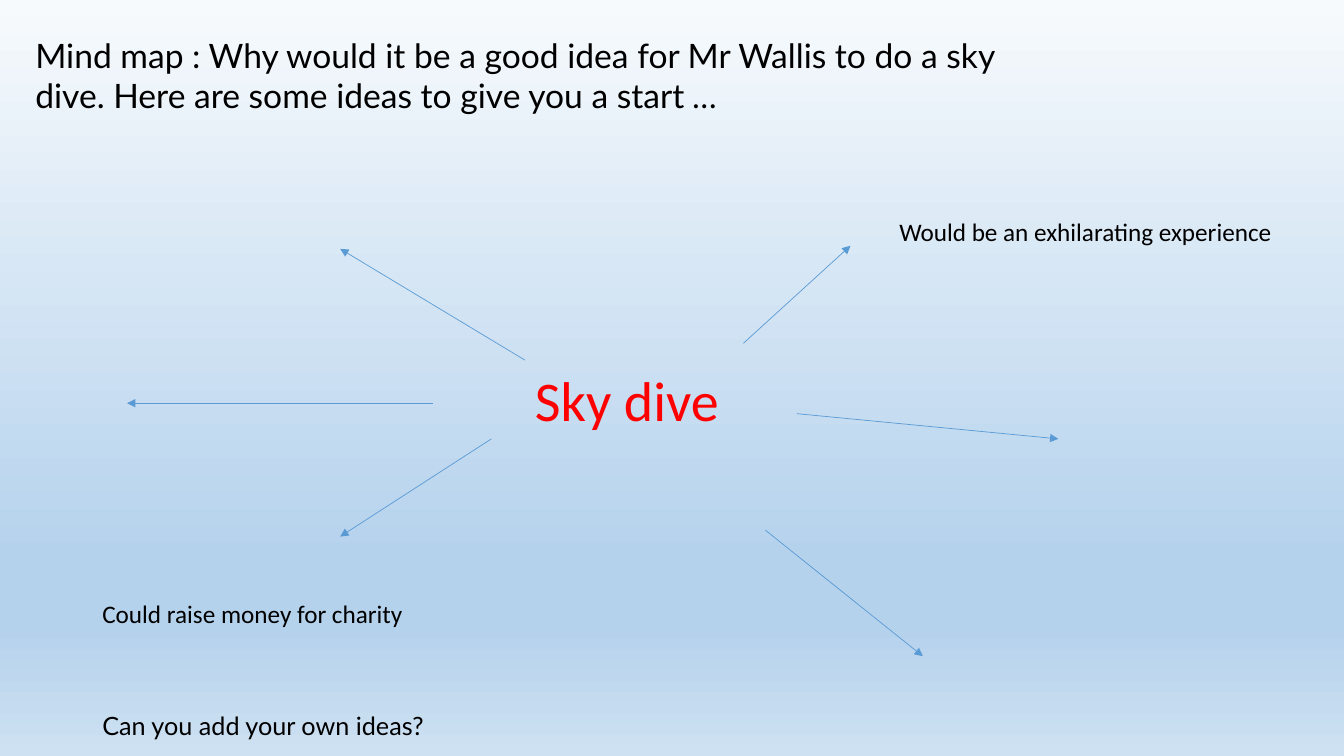
from pptx import Presentation
from pptx.dml.color import RGBColor
from pptx.enum.shapes import MSO_CONNECTOR
from pptx.enum.text import MSO_ANCHOR, MSO_AUTO_SIZE, PP_ALIGN
from pptx.oxml.ns import qn
from pptx.util import Pt
from lxml import etree

PX = 9525
STRAIGHT = MSO_CONNECTOR.STRAIGHT
TOP = MSO_ANCHOR.TOP
NO_FIT = MSO_AUTO_SIZE.NONE
LEFT = PP_ALIGN.LEFT
TITLE_ONLY = 5

BLACK, RED, BLUE = "000000", "FF0000", "5B9BD5"
SKY_STOPS = [(0, "F7FAFD"), (74, "B5D2EC"), (83, "B5D2EC"), (100, "CEE1F2")]

# start x, start y, end x, end y
ARROWS = [
    (708, 327, 810, 234),
    (468, 418, 324, 511),
    (729, 505, 879, 625),
    (500, 343, 324, 237),
    (759, 394, 1008, 418),
    (412, 384, 121, 384),
]

# text, left, top, width, height, font, size, colour
LABELS = [
    ("Sky dive", 500, 343, 208, 74, "Calibri", 40, RED),
    ("Would be an exhilarating experience", 847, 201, 378, 38, "Calibri", 18, BLACK),
    ("Could raise money for charity", 88, 565, 309, 38, "Calibri", 18, BLACK),
    ("Can you add your own ideas?", 88, 672, 391, 38, "Lato", 18, BLACK),
]


def px(*lengths):
    return [length * PX for length in lengths]


def colour(hex_text):
    return RGBColor.from_string(hex_text)


def style_font(font, name, size, hex_text):
    font.name = name
    font.size = Pt(size)
    font.color.rgb = colour(hex_text)


def paint_sky(page):
    fill = page.background.fill
    fill.gradient()
    fill.gradient_angle = 270
    stops = page.element.find(".//" + qn("a:gsLst"))
    for stop in list(stops):
        stops.remove(stop)
    for percent, hex_text in SKY_STOPS:
        stop = etree.SubElement(stops, qn("a:gs"), pos=str(percent * 1000))
        etree.SubElement(stop, qn("a:srgbClr"), val=hex_text)


def write_title(page):
    title = page.shapes.title
    title.left, title.top, title.width, title.height = px(24, 28, 953, 126)
    frame = title.text_frame
    frame.word_wrap = True
    frame.auto_size = NO_FIT
    frame.vertical_anchor = TOP
    para = frame.paragraphs[0]
    para.alignment = LEFT
    style_font(para.font, "Lato", 24, BLACK)
    para.add_run().text = (
        "Mind map : Why would it be a good idea for Mr Wallis to do a sky dive. "
        "Here are some ideas to give you a start "
    )
    ellipsis = para.add_run()
    ellipsis.text = "…"
    ellipsis.font.name = "Calibri"


def add_label(page, text, left, top, width, height, font, size, hex_text):
    box = page.shapes.add_textbox(*px(left, top, width, height))
    box.text_frame.word_wrap = False
    para = box.text_frame.paragraphs[0]
    para.text = text
    para.alignment = LEFT
    style_font(para.font, font, size, hex_text)


def add_arrow(page, *ends):
    arrow = page.shapes.add_connector(STRAIGHT, *px(*ends))
    arrow.line.color.rgb = colour(BLUE)
    arrow.line.width = Pt(0.5)
    properties = arrow.element.spPr
    etree.SubElement(properties.find(qn("a:ln")), qn("a:tailEnd"), type="triangle")
    etree.SubElement(properties, qn("a:effectLst"))


def main():
    deck = Presentation()
    deck.slide_width, deck.slide_height = px(1280, 720)
    page = deck.slides.add_slide(deck.slide_layouts[TITLE_ONLY])
    paint_sky(page)
    write_title(page)
    for ends in ARROWS:
        add_arrow(page, *ends)
    for label in LABELS:
        add_label(page, *label)
    deck.save("out.pptx")


if __name__ == "__main__":
    main()
